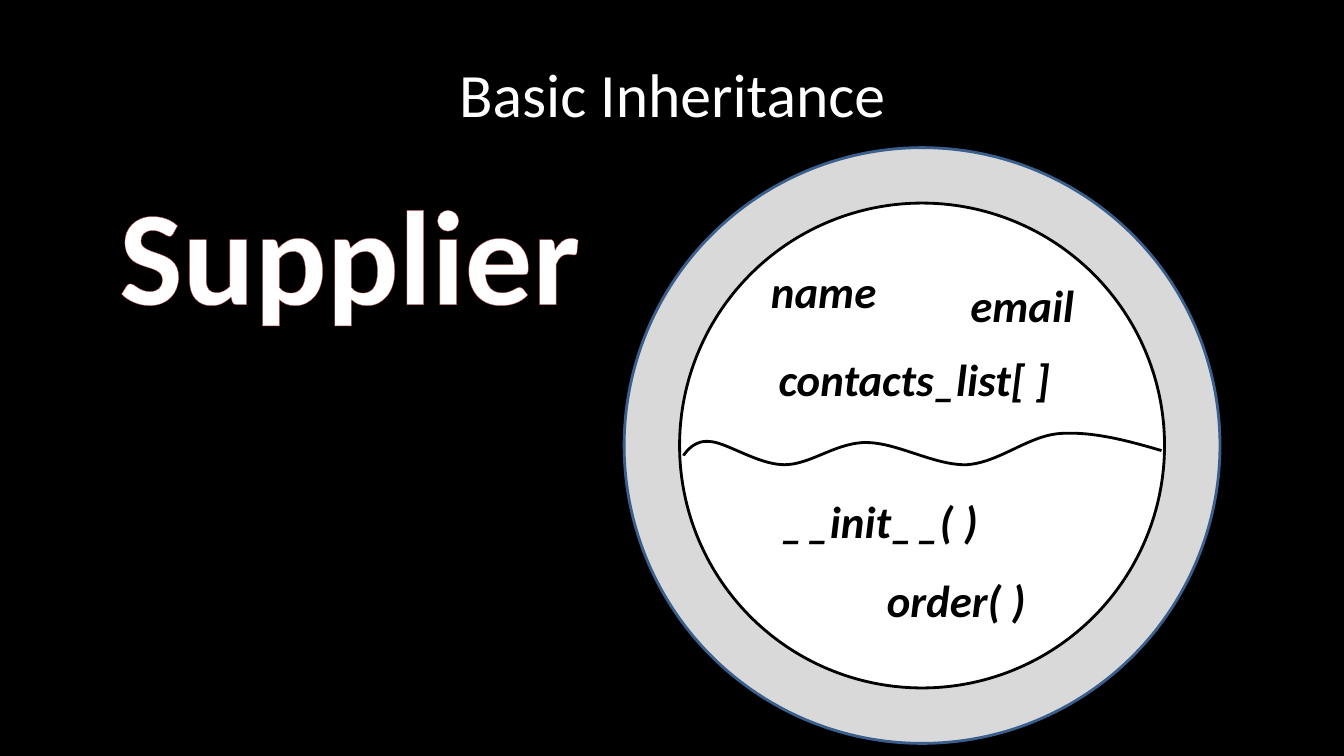
from lxml import etree
from pptx import Presentation
from pptx.dml.color import RGBColor
from pptx.enum import shapes, text
from pptx.oxml.ns import qn
from pptx.util import Inches, Pt

BLACK, WHITE = "000000", "FFFFFF"


def color(hex_string):
    return RGBColor.from_string(hex_string)


def format_run(run, size, hex_string, emphasis=False):
    run.font.name = "Calibri"
    run.font.size = Pt(size)
    run.font.color.rgb = color(hex_string)
    run.font.bold = emphasis
    run.font.italic = emphasis


presentation = Presentation()
presentation.slide_width = Inches(13.33)
presentation.slide_height = Inches(7.5)
slide = presentation.slides.add_slide(presentation.slide_layouts[5])
slide.background.fill.solid()
slide.background.fill.fore_color.rgb = color(BLACK)

title = slide.shapes.title
title.left, title.top = Inches(0.67), Inches(0.3)
title.width, title.height = Inches(12), Inches(1.25)
title.text_frame.text = "Basic Inheritance"
title.text_frame.vertical_anchor = text.MSO_ANCHOR.MIDDLE
title_paragraph = title.text_frame.paragraphs[0]
title_paragraph.alignment = text.PP_ALIGN.CENTER
format_run(title_paragraph.runs[0], 44, WHITE)

# Concentric circles: the object's shell and its contents
center_x, center_y = 9.145, 4.42
for diameter, fill, line in [(5.91, "D9D9D9", "3A5F8C"), (4.81, WHITE, BLACK)]:
    circle = slide.shapes.add_shape(
        shapes.MSO_SHAPE.OVAL,
        Inches(center_x - diameter / 2), Inches(center_y - diameter / 2),
        Inches(diameter), Inches(diameter))
    circle.shadow.inherit = False
    circle.fill.solid()
    circle.fill.fore_color.rgb = color(fill)
    circle.line.color.rgb = color(line)
    circle.line.width = Pt(2)

# Wave between data and methods: cubic curves, each drawn as short steps
wave_start = (11.52, 4.47)
wave_curves = [
    ((11.18, 4.37), (10.84, 4.28), (10.52, 4.3)),
    ((10.2, 4.32), (9.91, 4.59), (9.59, 4.61)),
    ((9.27, 4.62), (8.9, 4.39), (8.59, 4.39)),
    ((8.29, 4.39), (8.04, 4.61), (7.78, 4.61)),
    ((7.52, 4.61), (7.21, 4.39), (7.04, 4.38)),
    ((6.87, 4.36), (6.78, 4.52), (6.78, 4.52)),
]
STEPS = 20
wave_points = []
start = wave_start
for control_1, control_2, end in wave_curves:
    for step in range(1, STEPS + 1):
        t = step / STEPS
        weights = ((1 - t) ** 3, 3 * t * (1 - t) ** 2, 3 * t ** 2 * (1 - t), t ** 3)
        corners = (start, control_1, control_2, end)
        wave_points.append(tuple(
            Inches(sum(weight * corner[axis] for weight, corner in zip(weights, corners)))
            for axis in (0, 1)))
    start = end
builder = slide.shapes.build_freeform(Inches(wave_start[0]), Inches(wave_start[1]))
builder.add_line_segments(wave_points, close=False)
wave = builder.convert_to_shape()
wave.shadow.inherit = False
wave.fill.background()
wave.line.color.rgb = color(BLACK)
wave.line.width = Pt(2)

# Each label: left, top, width, height, colour, italic and bold, (text, size) pieces
labels = [
    (7.54, 2.57, 1.26, 0.64, [("name", 32)]),
    (7.61, 4.85, 2.23, 0.64,
     [("_", 32), (" ", 12), ("_init_", 32), (" ", 12), ("_( )", 32)]),
    (1.06, 1.64, 4.82, 1.72, [("Supplier", 96)]),
    (9.52, 2.71, 1.24, 0.64, [("email", 32)]),
    (7.61, 3.44, 2.92, 0.64, [("contacts_list[ ]", 32)]),
    (8.69, 5.63, 1.59, 0.64, [("order( )", 32)]),
]
for left, top, width, height, pieces in labels:
    label = slide.shapes.add_textbox(
        Inches(left), Inches(top), Inches(width), Inches(height))
    label.text_frame.word_wrap = False
    label.text_frame.auto_size = text.MSO_AUTO_SIZE.SHAPE_TO_FIT_TEXT
    paragraph = label.text_frame.paragraphs[0]
    paragraph.alignment = text.PP_ALIGN.CENTER
    for piece, size in pieces:
        run = paragraph.add_run()
        run.text = piece
        format_run(run, size, BLACK, emphasis=True)
    if pieces[0][0] == "Supplier":
        class_name = paragraph.runs[0]
        class_name.font.color.rgb = color(WHITE)
        class_name.font.italic = False
        outline = etree.Element(qn("a:ln"), w=str(Pt(0.52)))
        outline_fill = etree.SubElement(outline, qn("a:solidFill"))
        etree.SubElement(outline_fill, qn("a:srgbClr"), val="C0504D")
        class_name.font._element.insert(0, outline)

presentation.save("out.pptx")
